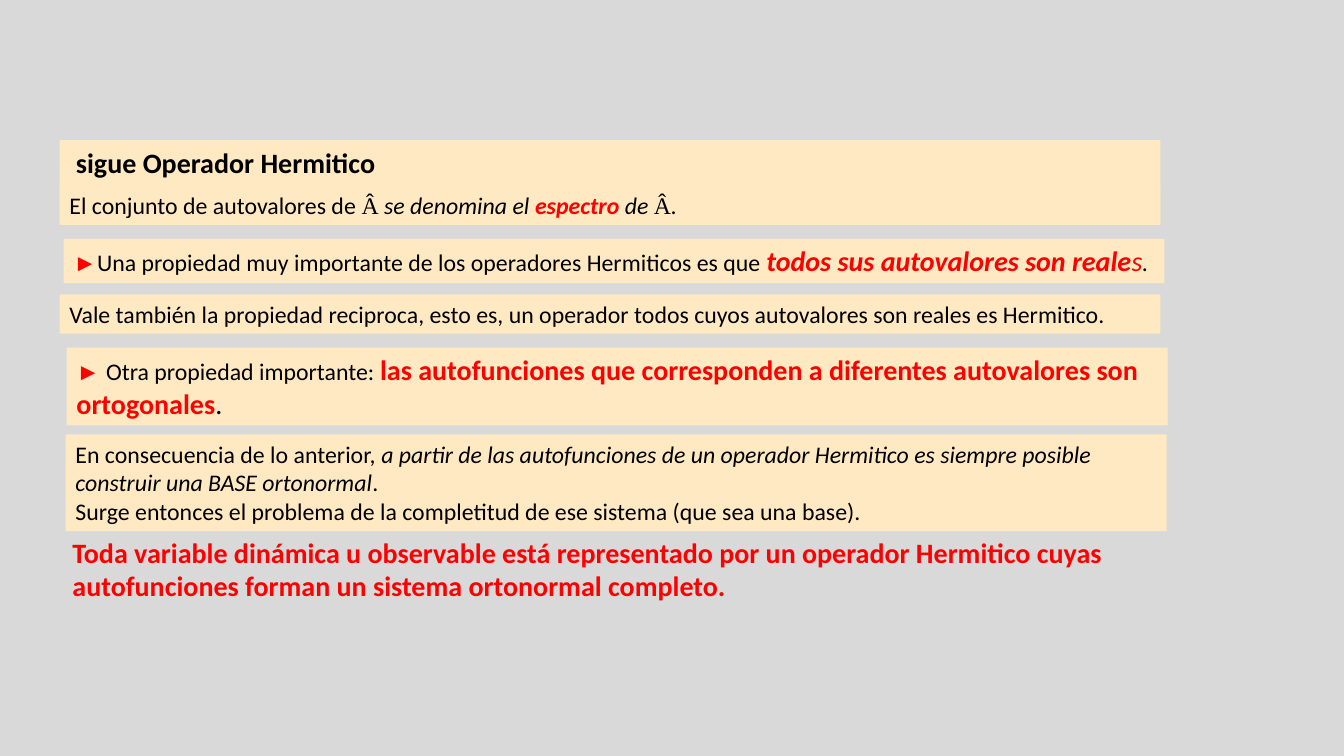
from pptx import Presentation
from pptx.dml.color import RGBColor
from pptx.enum.text import MSO_ANCHOR, MSO_AUTO_SIZE, PP_ALIGN
from pptx.util import Inches, Pt

LEFT = PP_ALIGN.LEFT
TOP = MSO_ANCHOR.TOP
GROW = MSO_AUTO_SIZE.SHAPE_TO_FIT_TEXT
TITLE_ONLY = 5
BOX_WIDTH = 10.92

COLORS = {"page": "D9D9D9", "band": "FEE9C2", "text": "000000", "accent": "FF0000"}

BASE = {"name": "Calibri", "size": Pt(17), "bold": False, "italic": False, "color": "text"}
PLAIN = {}
ITALIC = {"italic": True}
OPERATOR = {"name": "Times New Roman"}
MARKER = {"name": "Times New Roman", "color": "accent"}
TERM = {"bold": True, "italic": True, "color": "accent"}
HEADING = {"size": Pt(20), "bold": True}
KEY = {**HEADING, "color": "accent"}
KEY_ITALIC = {**KEY, "italic": True}

TITLE = [[(" sigue Operador Hermitico", HEADING)]]

# Each box: left, top, height, fill colour, paragraphs of (words, format)
BOXES = [
    (0.59, 1.84, 0.39, "band", [[
        ("El conjunto de autovalores de ", PLAIN), ("Â", OPERATOR),
        (" se denomina el ", ITALIC), ("espectro ", TERM), ("de ", ITALIC),
        ("Â", OPERATOR), (".", ITALIC)]]),
    (0.63, 2.37, 0.44, "band", [[
        ("►", MARKER),
        ("Una propiedad muy importante de los operadores Hermiticos es que ", PLAIN),
        ("todos sus autovalores son reale", KEY_ITALIC),
        ("s", {**KEY_ITALIC, "bold": False}), (".", ITALIC)]]),
    (0.59, 2.92, 0.39, "band", [[
        ("Vale también la propiedad reciproca, esto es, un operador todos cuyos "
         "autovalores son reales es Hermitico.", PLAIN)]]),
    (0.66, 3.45, 0.77, "band", [[
        ("► ", MARKER), ("Otra propiedad importante: ", PLAIN),
        ("las autofunciones que corresponden a diferentes autovalores son ortogonales", KEY),
        (".", {"size": Pt(20)})]]),
    (0.65, 4.31, 0.96, "band", [
        [("En consecuencia de lo anterior, ", PLAIN),
         ("a partir de las autofunciones de un operador Hermitico es siempre posible "
          "construir una BASE ortonormal", ITALIC), (".", PLAIN)],
        [("Surge entonces el problema de la completitud de ese sistema "
          "(que sea una base).", PLAIN)]]),
    (0.62, 5.26, 0.77, None, [[
        ("Toda variable dinámica u observable está representado por un operador Hermitico "
         "cuyas autofunciones forman un sistema ortonormal completo.", KEY)]]),
]


def color(name):
    return RGBColor.from_string(COLORS[name])


def paint(target, name):
    target.fill.solid()
    target.fill.fore_color.rgb = color(name)


def add_span(para, words, changes):
    """Add a run in the base format with the given changes."""
    span = para.add_run()
    span.text = words
    for key, value in {**BASE, **changes}.items():
        if key == "color":
            span.font.color.rgb = color(value)
        else:
            setattr(span.font, key, value)


def write(box, paragraphs):
    frame = box.text_frame
    frame.word_wrap = True
    frame.auto_size = GROW
    frame.vertical_anchor = TOP
    for index, spans in enumerate(paragraphs):
        para = frame.add_paragraph() if index else frame.paragraphs[0]
        para.alignment = LEFT
        for words, changes in spans:
            add_span(para, words, changes)


def set_title(page):
    box = page.shapes.title
    box.left, box.top = Inches(0.59), Inches(1.39)
    box.width, box.height = Inches(BOX_WIDTH), Inches(0.44)
    paint(box, "band")
    write(box, TITLE)


def add_box(page, left, top, height, fill, paragraphs):
    box = page.shapes.add_textbox(
        Inches(left), Inches(top), Inches(BOX_WIDTH), Inches(height))
    if fill:
        paint(box, fill)
    write(box, paragraphs)


def main():
    deck = Presentation()
    deck.slide_width, deck.slide_height = Inches(13.33), Inches(7.5)
    page = deck.slides.add_slide(deck.slide_layouts[TITLE_ONLY])
    paint(page.background, "page")
    set_title(page)
    for box in BOXES:
        add_box(page, *box)
    deck.save("out.pptx")


if __name__ == "__main__":
    main()
